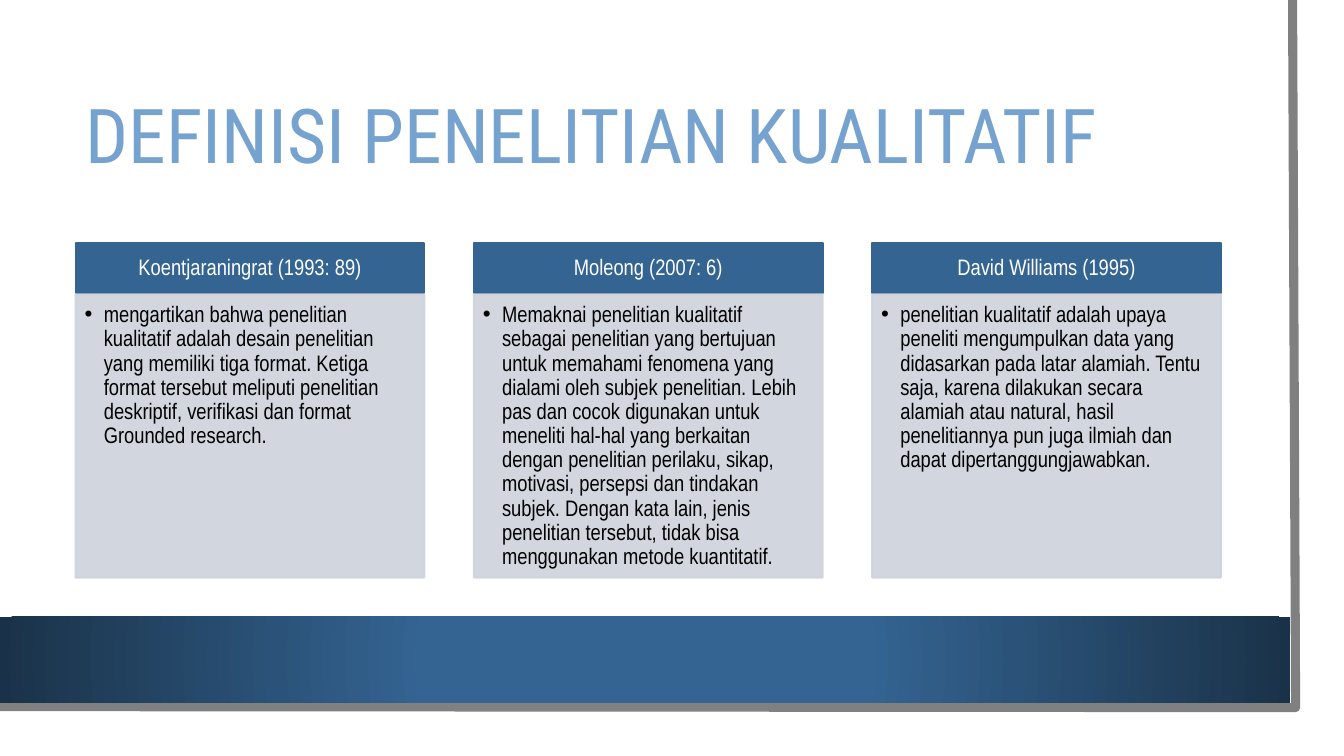
from dataclasses import dataclass

from lxml.etree import SubElement
from pptx import Presentation
from pptx.dml.color import RGBColor
from pptx.enum.shapes import MSO_SHAPE as Shape
from pptx.enum.text import MSO_ANCHOR as Anchor, MSO_AUTO_SIZE as AutoSize, PP_ALIGN as Align
from pptx.oxml import parse_xml
from pptx.oxml.ns import nsdecls, qn
from pptx.shapes.autoshape import Shape as AutoShape
from pptx.slide import Slide
from pptx.text.text import TextFrame, _Paragraph as Paragraph
from pptx.util import Inches, Pt


@dataclass(frozen=True)
class Theme:
    white: str = "FFFFFF"
    black: str = "000000"
    blue: str = "346492"
    navy: str = "1A3249"
    sky: str = "75A2CE"
    mist: str = "CED3DC"
    gray: str = "808080"
    title_font: str = "Roboto Condensed"
    body_font: str = "Arial Narrow"
    title_size: int = 54
    body_size: int = 16
    line_spacing: float = 0.9
    panel_opacity: int = 90


@dataclass(frozen=True)
class Box:
    left: float
    top: float
    width: float
    height: float


@dataclass(frozen=True)
class Definition:
    author: str
    text: str


THEME = Theme()
LEFT, PITCH, CARD_WIDTH = 0.75, 3.95, 3.46
HEAD_TOP, HEAD_HEIGHT = 2.41, 0.5
BODY_TOP, BODY_HEIGHT = 2.92, 2.81
INDENT = 0.19

DEFINITIONS = [
    Definition(
        "Koentjaraningrat (1993: 89)",
        "mengartikan bahwa penelitian kualitatif adalah desain penelitian yang memiliki "
        "tiga format. Ketiga format tersebut meliputi penelitian deskriptif, verifikasi "
        "dan format Grounded research.",
    ),
    Definition(
        "Moleong (2007: 6)",
        "Memaknai penelitian kualitatif sebagai penelitian yang bertujuan untuk memahami "
        "fenomena yang dialami oleh subjek penelitian. Lebih pas dan cocok digunakan untuk "
        "meneliti hal-hal yang berkaitan dengan penelitian perilaku, sikap, motivasi, "
        "persepsi dan tindakan subjek. Dengan kata lain, jenis penelitian tersebut, tidak "
        "bisa menggunakan metode kuantitatif.",
    ),
    Definition(
        "David Williams (1995)",
        "penelitian kualitatif adalah upaya peneliti mengumpulkan data yang didasarkan pada "
        "latar alamiah. Tentu saja, karena dilakukan secara alamiah atau natural, hasil "
        "penelitiannya pun juga ilmiah dan dapat dipertanggungjawabkan.",
    ),
]


def rgb(color: str) -> RGBColor:
    return RGBColor.from_string(color)


def add_rect(s: Slide, box: Box, color: str, outlined: bool = False) -> AutoShape:
    sp = s.shapes.add_shape(
        Shape.RECTANGLE, Inches(box.left), Inches(box.top), Inches(box.width), Inches(box.height)
    )
    sp.shadow.inherit = False
    sp.fill.solid()
    sp.fill.fore_color.rgb = rgb(color)
    if outlined:
        sp.line.color.rgb = rgb(color)
        sp.line.width = Pt(1.5)
    else:
        sp.line.fill.background()
    return sp


def set_opacity(sp: AutoShape, percent: int) -> None:
    for color in sp.element.spPr.iter(qn("a:srgbClr")):
        SubElement(color, qn("a:alpha"), val=str(percent * 1000))


def set_radial_fill(sp: AutoShape, inner: str, outer: str) -> None:
    gradient = parse_xml(
        f'<a:gradFill {nsdecls("a")} rotWithShape="1"><a:gsLst>'
        f'<a:gs pos="34000"><a:srgbClr val="{inner}"/></a:gs>'
        f'<a:gs pos="100000"><a:srgbClr val="{outer}"/></a:gs></a:gsLst>'
        '<a:path path="circle"><a:fillToRect l="50000" t="50000" r="50000" b="50000"/></a:path>'
        "</a:gradFill>"
    )
    spPr = sp.element.spPr
    spPr.replace(spPr.find(qn("a:solidFill")), gradient)


def set_margins(tf: TextFrame, left: float, top: float, right: float, bottom: float) -> None:
    tf.margin_left, tf.margin_top = Inches(left), Inches(top)
    tf.margin_right, tf.margin_bottom = Inches(right), Inches(bottom)


def write(tf: TextFrame, text: str, font: str, size: int, color: str, align: Align) -> Paragraph:
    tf.word_wrap = True
    p = tf.paragraphs[0]
    p.alignment = align
    p.line_spacing = THEME.line_spacing
    r = p.add_run()
    r.text = text
    r.font.name, r.font.size = font, Pt(size)
    r.font.color.rgb = rgb(color)
    return p


def add_bullet(p: Paragraph) -> None:
    pPr = p._p.get_or_add_pPr()
    pPr.set("marL", str(Inches(INDENT)))
    pPr.set("indent", str(-Inches(INDENT)))
    SubElement(pPr, qn("a:buFont"), typeface="Arial")
    SubElement(pPr, qn("a:buChar"), char="•")


def add_frame(s: Slide) -> None:
    add_rect(s, Box(0, 0, 13.1, 7.27), THEME.white)
    builder = s.shapes.build_freeform(Inches(12.82), Inches(0))
    builder.add_line_segments(
        [(Inches(12.85), Inches(7.02)), (Inches(-0.03), Inches(7.01))], close=False
    )
    edge = builder.convert_to_shape()
    edge.shadow.inherit = False
    edge.fill.background()
    edge.line.color.rgb = rgb(THEME.gray)
    edge.line.width = Pt(6.5)
    band = add_rect(s, Box(0, 6.12, 12.8, 0.85), THEME.blue)
    set_radial_fill(band, THEME.blue, THEME.navy)


def add_title(s: Slide, text: str) -> None:
    title = s.shapes.title
    title.element.getparent().append(title.element)
    title.left, title.top = Inches(LEFT), Inches(0.75)
    title.width, title.height = Inches(11.37), Inches(1.26)
    tf = title.text_frame
    tf.auto_size = AutoSize.NONE
    tf.vertical_anchor = Anchor.MIDDLE
    write(tf, text, THEME.title_font, THEME.title_size, THEME.sky, Align.LEFT)


def add_card(s: Slide, left: float, definition: Definition) -> None:
    head = add_rect(s, Box(left, HEAD_TOP, CARD_WIDTH, HEAD_HEIGHT), THEME.blue, outlined=True)
    tf = head.text_frame
    tf.vertical_anchor = Anchor.MIDDLE
    set_margins(tf, 0.12, 0.07, 0.12, 0.07)
    write(tf, definition.author, THEME.body_font, THEME.body_size, THEME.white, Align.CENTER)

    body = add_rect(s, Box(left, BODY_TOP, CARD_WIDTH, BODY_HEIGHT), THEME.mist, outlined=True)
    set_opacity(body, THEME.panel_opacity)
    tf = body.text_frame
    tf.vertical_anchor = Anchor.TOP
    set_margins(tf, 0.09, 0.09, 0.12, 0.14)
    p = write(tf, definition.text, THEME.body_font, THEME.body_size, THEME.black, Align.LEFT)
    add_bullet(p)


def main() -> None:
    prs = Presentation()
    prs.slide_width, prs.slide_height = Inches(13.33), Inches(7.5)
    s = prs.slides.add_slide(prs.slide_layouts.get_by_name("Title Only"))
    add_frame(s)
    add_title(s, "DEFINISI PENELITIAN KUALITATIF")
    for i, definition in enumerate(DEFINITIONS):
        add_card(s, LEFT + i * PITCH, definition)
    prs.save("out.pptx")


if __name__ == "__main__":
    main()
